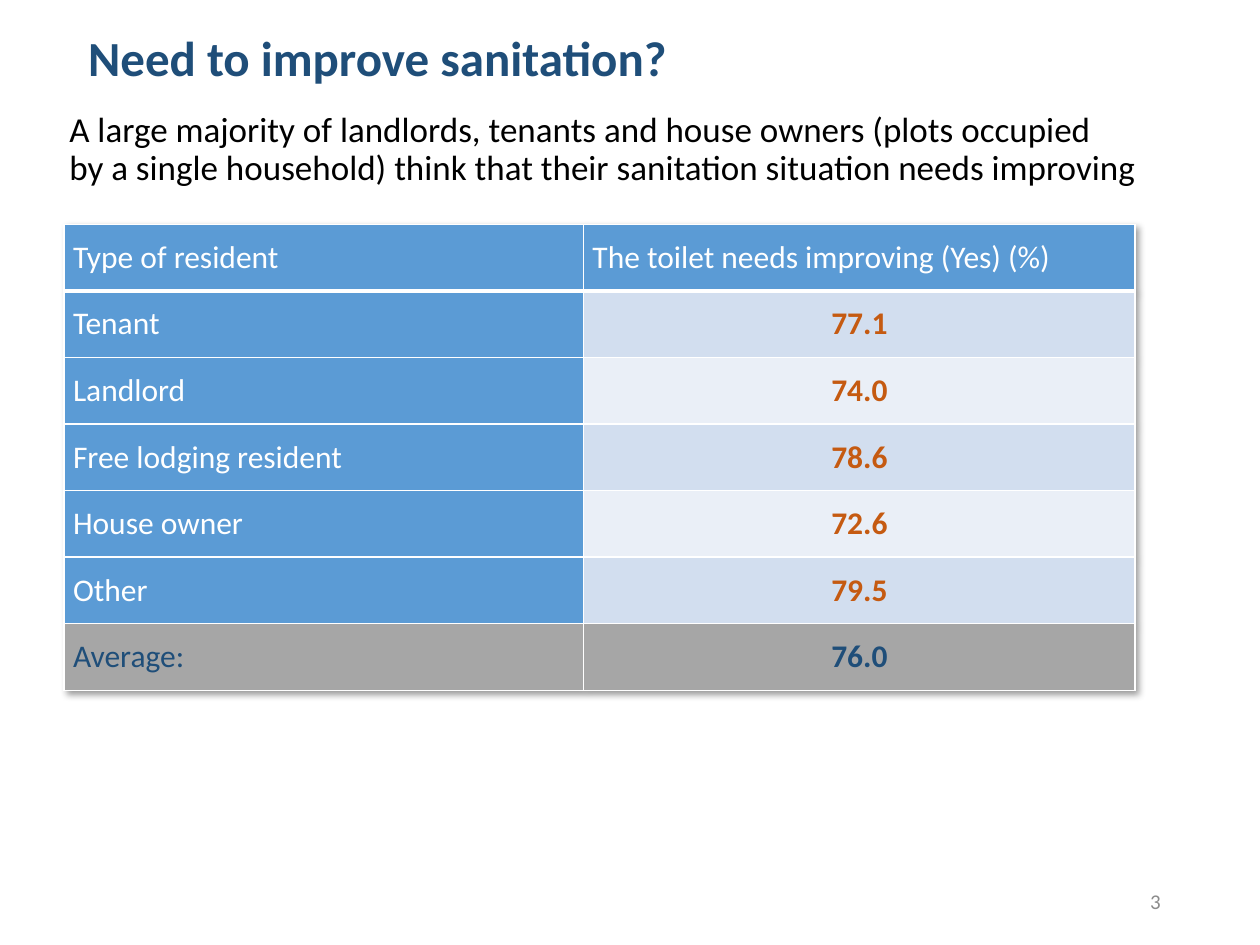
from pptx import Presentation
from pptx.dml.color import RGBColor
from pptx.enum.text import MSO_ANCHOR as ANCHOR, MSO_AUTO_SIZE as FIT, PP_ALIGN as ALIGN
from pptx.oxml import parse_xml
from pptx.oxml.ns import nsdecls
from pptx.util import Inches, Pt
from lxml.etree import SubElement
from pptx.oxml.ns import qn

NAVY = RGBColor(0x1F, 0x4E, 0x79)
BLUE = RGBColor(0x5B, 0x9B, 0xD5)
BAND_DARK = RGBColor(0xD2, 0xDE, 0xEF)
BAND_LIGHT = RGBColor(0xEA, 0xEF, 0xF7)
ORANGE = RGBColor(0xC5, 0x5A, 0x11)
GREY = RGBColor(0xA6, 0xA6, 0xA6)
NUMBER_GREY = RGBColor(0x8C, 0x8C, 0x8C)
WHITE = RGBColor(0xFF, 0xFF, 0xFF)
BLACK = RGBColor(0, 0, 0)
FONT = "Calibri"

HEADER = ("Type of resident", "The toilet needs improving (Yes) (%)")
RESIDENTS = [
    ("Tenant", "77.1"),
    ("Landlord", "74.0"),
    ("Free lodging resident", "78.6"),
    ("House owner", "72.6"),
    ("Other", "79.5"),
]
AVERAGE = ("Average:", "76.0")
FINDING = [
    "A large majority of landlords, tenants and house owners (plots occupied",
    "by a single household) think that their sanitation situation needs improving",
]


def place(sp, box):
    sp.left, sp.top, sp.width, sp.height = (Inches(v) for v in box)


def style(font, size, color, bold=False):
    font.name, font.size, font.bold = FONT, Pt(size), bold
    font.color.rgb = color


def add_run(p, text, size, color, bold=False):
    r = p.add_run()
    r.text = text
    style(r.font, size, color, bold)


def add_title(s, box, text):
    sp = s.shapes.title
    place(sp, box)
    tf = sp.text_frame
    tf.auto_size, tf.vertical_anchor = FIT.NONE, ANCHOR.MIDDLE
    p = tf.paragraphs[0]
    p.alignment, p.line_spacing = ALIGN.LEFT, 0.9
    add_run(p, text, 28, NAVY, True)


def add_body(s, box, lines):
    sp = s.placeholders[1]
    place(sp, box)
    tf = sp.text_frame
    tf.auto_size = FIT.NONE
    for i, line in enumerate(lines):
        p = tf.paragraphs[0] if i == 0 else tf.add_paragraph()
        pPr = p._p.get_or_add_pPr()
        pPr.set("marL", "0")
        pPr.set("indent", str(Inches(0.02)))
        SubElement(pPr, qn("a:buNone"))
        p.alignment, p.line_spacing, p.space_before = ALIGN.JUSTIFY, 0.9, Pt(0)
        add_run(p, line, 20, BLACK)


def set_borders(cell, bottom):
    tcPr = cell._tc.get_or_add_tcPr()
    for side, width in (("L", 1), ("R", 1), ("T", 1), ("B", bottom)):
        tcPr.append(parse_xml(
            f'<a:ln{side} {nsdecls("a")} w="{Pt(width)}"><a:solidFill>'
            f'<a:srgbClr val="{WHITE}"/></a:solidFill></a:ln{side}>'))


def fill_cell(cell, text, fill, color, align, bold, bottom):
    set_borders(cell, bottom)
    cell.fill.solid()
    cell.fill.fore_color.rgb = fill
    cell.vertical_anchor = ANCHOR.MIDDLE
    cell.margin_left = cell.margin_right = Inches(0.07)
    cell.margin_top = cell.margin_bottom = 0
    p = cell.text_frame.paragraphs[0]
    p.alignment = align
    add_run(p, text, 18, color, bold)


def add_resident_table(s, box, shares):
    rows = [HEADER, *RESIDENTS, AVERAGE]
    left, top, width, height = (Inches(v) for v in box)
    table = s.shapes.add_table(len(rows), 2, left, top, width, height).table
    for col, share in zip(table.columns, shares):
        col.width = int(width * share)
    table._tbl.tblPr.insert(0, parse_xml(
        f'<a:effectLst {nsdecls("a")}><a:outerShdw blurRad="50800" dist="38100" '
        'dir="2700000" algn="tl" rotWithShape="0"><a:prstClr val="black">'
        '<a:alpha val="40000"/></a:prstClr></a:outerShdw></a:effectLst>'))
    for i, (label, value) in enumerate(rows):
        is_header, is_average = i == 0, i == len(rows) - 1
        label_fill = value_fill = GREY if is_average else BLUE
        label_color = value_color = NAVY if is_average else WHITE
        if not (is_header or is_average):
            value_fill = BAND_DARK if i % 2 else BAND_LIGHT
            value_color = ORANGE
        bottom = 3 if is_header else 1
        fill_cell(table.cell(i, 0), label, label_fill, label_color,
                  ALIGN.JUSTIFY, False, bottom)
        fill_cell(table.cell(i, 1), value, value_fill, value_color,
                  ALIGN.JUSTIFY if is_header else ALIGN.CENTER, not is_header, bottom)


def add_page_number(s, box, number):
    tf = s.shapes.add_textbox(*(Inches(v) for v in box)).text_frame
    tf.word_wrap, tf.vertical_anchor = True, ANCHOR.MIDDLE
    p = tf.paragraphs[0]
    p.alignment = ALIGN.RIGHT
    add_run(p, number, 12, NUMBER_GREY)


def main():
    prs = Presentation()
    prs.slide_width, prs.slide_height = Inches(10), Inches(7.5)
    s = prs.slides.add_slide(prs.slide_layouts[1])
    add_title(s, (0.6, 0.13, 9.07, 0.71), "Need to improve sanitation?")
    add_body(s, (0.43, 0.84, 9.21, 5.71), FINDING)
    add_page_number(s, (7.06, 6.95, 2.25, 0.4), "3")
    add_resident_table(s, (0.51, 1.78, 8.5, 3.7), (0.485, 0.515))
    prs.save("out.pptx")


if __name__ == "__main__":
    main()
